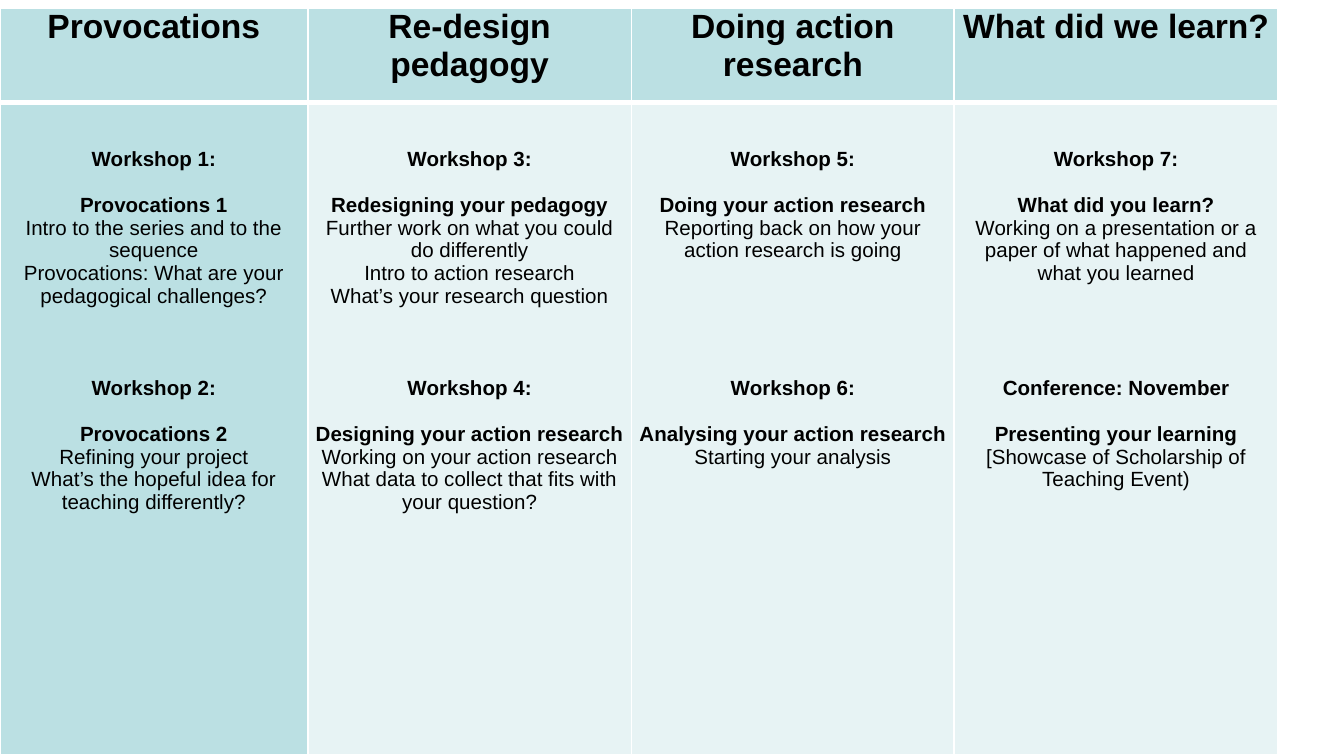
from collections import namedtuple

from lxml import etree
from pptx import Presentation
from pptx.dml.color import RGBColor
from pptx.enum.text import PP_ALIGN
from pptx.oxml.ns import qn
from pptx.util import Inches, Pt

BLACK = RGBColor(0x00, 0x00, 0x00)
WHITE = RGBColor(0xFF, 0xFF, 0xFF)
TEAL = RGBColor(0xBB, 0xE0, 0xE3)
PALE_TEAL = RGBColor(0xE7, 0xF3, 0xF4)

FONT = "Arial"
LINE = 12.3  # height of one 11 pt text line, in points
COLUMN_WIDTHS = [2.29, 2.41, 2.4, 2.41]
ROW_HEIGHTS = [0.7, 4.86]

# lines_before: empty lines above the session; joined: details follow the topic
Session = namedtuple("Session", "name topic details lines_before joined",
                     defaults=(0, False))

STAGES = {
    "Provocations": [
        Session("Workshop 1:", "Provocations 1",
                ["Intro to the series and to the sequence",
                 "Provocations: What are your pedagogical challenges?"]),
        Session("Workshop 2:", "Provocations 2",
                ["Refining your project",
                 "What’s the hopeful idea for teaching differently?"], 3),
    ],
    "Re-design pedagogy": [
        Session("Workshop 3:", "Redesigning your pedagogy",
                ["Further work on what you could do differently",
                 "Intro to action research",
                 "What’s your research question"]),
        Session("Workshop 4:", "Designing your action research",
                ["Working on your action research",
                 "What data to collect that fits with your question?"], 3),
    ],
    "Doing action research": [
        Session("Workshop 5:", "Doing your action research",
                ["Reporting back on how your action research is going"]),
        Session("Workshop 6:", "Analysing your action research",
                ["Starting your analysis"], 5),
    ],
    "What did we learn?": [
        Session("Workshop 7:", "What did you learn?",
                ["Working on a presentation or a paper of what happened "
                 "and what you learned"]),
        Session("Conference: November", "Presenting your learning ",
                ["[Showcase of Scholarship of Teaching Event)"], 4, True),
    ],
}


def add_text(frame, text, size=11, bold=False, lines_before=0, joined=False):
    """Add text as a new centred paragraph, or to the last one if joined."""
    paragraph = frame.paragraphs[-1]
    if paragraph.runs and not joined:
        paragraph = frame.add_paragraph()
    if not joined:
        paragraph.alignment = PP_ALIGN.CENTER
        paragraph.space_before = Pt(lines_before * LINE)
    run = paragraph.add_run()
    run.text = text
    run.font.name = FONT
    run.font.size = Pt(size)
    run.font.bold = bold
    run.font.color.rgb = BLACK


def format_cell(cell, fill, margin_top=0, top=1, bottom=1):
    """Set margins, white borders (widths in points) and fill."""
    cell.margin_left = cell.margin_right = Inches(0.05)
    cell.margin_top, cell.margin_bottom = Inches(margin_top), 0
    properties = cell._tc.get_or_add_tcPr()
    for side, width in zip("LRTB", (1, 1, top, bottom)):
        line = etree.SubElement(properties, qn(f"a:ln{side}"), w=str(Pt(width)))
        solid = etree.SubElement(line, qn("a:solidFill"))
        etree.SubElement(solid, qn("a:srgbClr"), val=str(WHITE))
    cell.fill.solid()
    cell.fill.fore_color.rgb = fill


def add_programme(slide, left, top):
    """Place the table with one column per stage."""
    table = slide.shapes.add_table(
        2, len(STAGES), Inches(left), Inches(top),
        Inches(sum(COLUMN_WIDTHS)), Inches(sum(ROW_HEIGHTS))).table
    for row, height in zip(table.rows, ROW_HEIGHTS):
        row.height = Inches(height)

    for index, (heading, sessions) in enumerate(STAGES.items()):
        table.columns[index].width = Inches(COLUMN_WIDTHS[index])

        # Stage heading
        header = table.cell(0, index)
        format_cell(header, TEAL, bottom=3)
        add_text(header.text_frame, heading, size=18, bold=True)

        # Sessions of the stage
        body = table.cell(1, index)
        format_cell(body, PALE_TEAL if index else TEAL, margin_top=0.34, top=3)
        frame = body.text_frame
        for session in sessions:
            add_text(frame, session.name, bold=True,
                     lines_before=session.lines_before)
            add_text(frame, session.topic, bold=True, lines_before=1)
            for detail in session.details:
                add_text(frame, detail, joined=session.joined)


def main():
    presentation = Presentation()
    presentation.slide_width = Inches(10)
    presentation.slide_height = Inches(10) * 9 // 16
    slide = presentation.slides.add_slide(presentation.slide_layouts[6])
    add_programme(slide, left=0, top=0.06)
    presentation.save("out.pptx")


if __name__ == "__main__":
    main()
